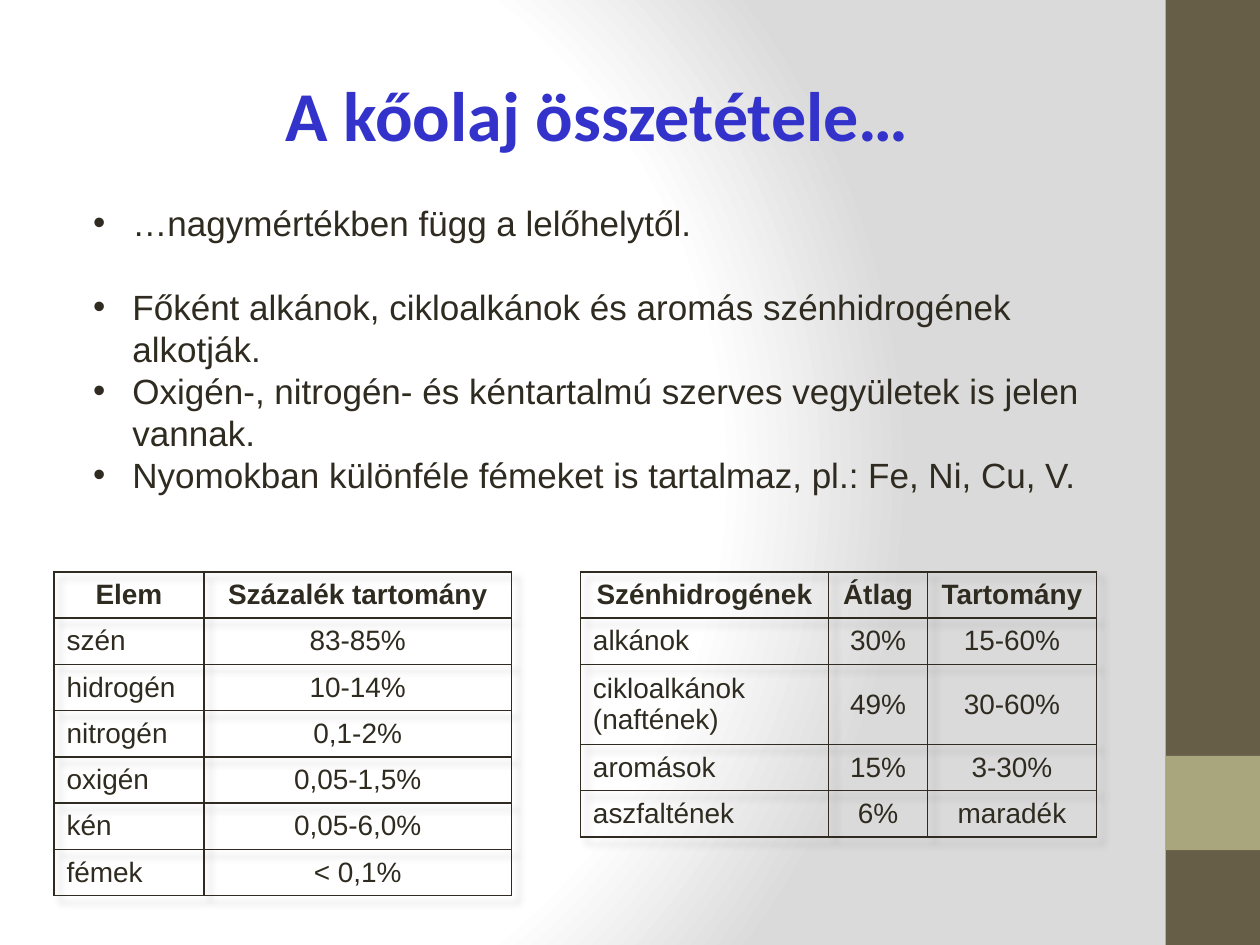
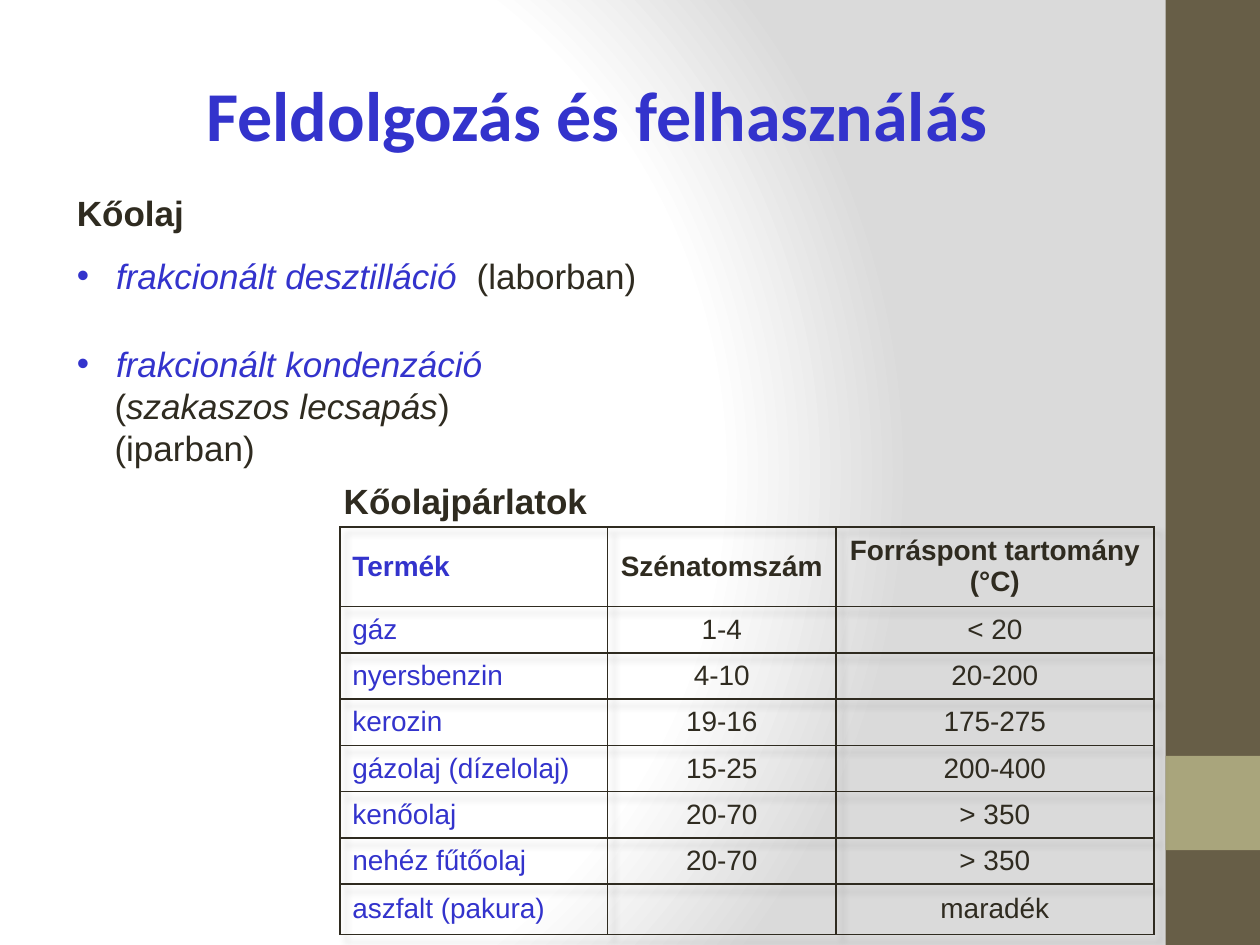
from dataclasses import dataclass

from lxml.etree import SubElement
from pptx import Presentation
from pptx.dml.color import RGBColor
from pptx.enum.shapes import MSO_SHAPE
from pptx.enum.text import MSO_ANCHOR, MSO_AUTO_SIZE, PP_ALIGN
from pptx.oxml import parse_xml
from pptx.oxml.ns import nsdecls, qn
from pptx.util import Cm, Pt

COLORS = {
    "ink": "2F2B20",
    "blue": "3333CC",
    "band": "675E47",
    "accent": "A9A57C",
    "white": "FFFFFF",
    "grey": "DADADA",
}
BODY_FONT, TITLE_FONT = "Arial", "Calibri"
ROW_H, TALL_ROW_H = 0.93, 1.61
INDENT = 0.79


@dataclass
class Run:
    text: str
    color: str = "ink"
    bold: bool = False
    italic: bool = False


@dataclass
class Para:
    runs: list[Run]
    bullet: bool = False
    indent: float = 0
    after: float = 0


@dataclass
class Grid:
    left: float
    top: float
    widths: list[float]
    rows: list[list[str]]
    tall_row: int = -1
    first_color: str = "ink"
    center_head: bool = True


def rgb(name: str) -> RGBColor:
    return RGBColor.from_string(COLORS[name])


# Text
def add_run(p, text: str, *, size=20, font=BODY_FONT, color="ink", bold=False, italic=False):
    r = p.add_run()
    r.text = text
    f = r.font
    f.size, f.name, f.bold, f.italic = Pt(size), font, bold, italic
    f.color.rgb = rgb(color)


def set_bullet(p, indent: float) -> None:
    pPr = p._p.get_or_add_pPr()
    pPr.set("marL", str(Cm(indent)))
    pPr.set("indent", str(-Cm(indent)))
    SubElement(pPr, qn("a:buFont")).set("typeface", BODY_FONT)
    SubElement(pPr, qn("a:buChar")).set("char", "•")


def add_box(s, left: float, top: float, width: float, height: float):
    tf = s.shapes.add_textbox(Cm(left), Cm(top), Cm(width), Cm(height)).text_frame
    tf.word_wrap = True
    tf.auto_size = MSO_AUTO_SIZE.SHAPE_TO_FIT_TEXT
    return tf


def add_paragraphs(s, left: float, top: float, width: float, height: float, paras: list[Para]) -> None:
    tf = add_box(s, left, top, width, height)
    for i, para in enumerate(paras):
        p = tf.paragraphs[0] if i == 0 else tf.add_paragraph()
        p.space_after = Pt(para.after)
        if para.bullet:
            set_bullet(p, INDENT)
        elif para.indent:
            p._p.get_or_add_pPr().set("marL", str(Cm(para.indent)))
        for r in para.runs:
            add_run(p, r.text, color=r.color, bold=r.bold, italic=r.italic)


# Tables
def set_borders(cell) -> None:
    cell.fill.background()
    tcPr = cell._tc.get_or_add_tcPr()
    for i, side in enumerate(("lnL", "lnR", "lnT", "lnB")):
        tcPr.insert(i, parse_xml(
            f'<a:{side} {nsdecls("a")} w="12700"><a:solidFill>'
            f'<a:srgbClr val="{COLORS["ink"]}"/></a:solidFill></a:{side}>'))


def add_grid(s, grid: Grid) -> None:
    heights = [TALL_ROW_H if i == grid.tall_row else ROW_H for i in range(len(grid.rows))]
    table = s.shapes.add_table(
        len(grid.rows), len(grid.widths), Cm(grid.left), Cm(grid.top),
        Cm(sum(grid.widths)), Cm(sum(heights))).table
    table.first_row = table.horz_banding = False
    table._tbl.tblPr.insert(0, parse_xml(
        f'<a:effectLst {nsdecls("a")}><a:outerShdw blurRad="50800" dist="63500" dir="2700000">'
        '<a:srgbClr val="000000"><a:alpha val="20000"/></a:srgbClr></a:outerShdw></a:effectLst>'))
    for col, width in zip(table.columns, grid.widths):
        col.width = Cm(width)
    for i, (row, height) in enumerate(zip(grid.rows, heights)):
        table.rows[i].height = Cm(height)
        for j, text in enumerate(row):
            cell = table.cell(i, j)
            cell.vertical_anchor = MSO_ANCHOR.MIDDLE
            set_borders(cell)
            p = cell.text_frame.paragraphs[0]
            if j > 0 or (i == 0 and grid.center_head):
                p.alignment = PP_ALIGN.CENTER
            if text:
                add_run(p, text, size=16, bold=i == 0,
                        color="ink" if j else grid.first_color)


# Shared background, side band and title
def set_background(master) -> None:
    master.background.fill.solid()
    bgPr = master._element.find(".//" + qn("p:bgPr"))
    stops = "".join(
        f'<a:gs pos="{pos * 1000}"><a:srgbClr val="{COLORS[name]}"/></a:gs>'
        for pos, name in ((0, "white"), (75, "white"), (100, "grey")))
    bgPr.replace(bgPr[0], parse_xml(
        f'<a:gradFill {nsdecls("a")} rotWithShape="1"><a:gsLst>{stops}</a:gsLst>'
        '<a:path path="circle"><a:fillToRect l="20000" t="50000" r="100000" b="50000"/>'
        '</a:path></a:gradFill>'))


def add_band(s, top: float, height: float, color: str) -> None:
    sp = s.shapes.add_shape(MSO_SHAPE.RECTANGLE, Cm(23.5), Cm(top), Cm(1.9), Cm(height))
    sp.shadow.inherit = False
    sp.fill.solid()
    sp.fill.fore_color.rgb = rgb(color)
    sp.line.fill.background()


def new_slide(prs, title: str):
    s = prs.slides.add_slide(prs.slide_layouts[6])
    add_band(s, 0, 19.05, "band")
    add_band(s, 15.24, 1.9, "accent")
    p = add_box(s, 0.7, 1.32, 22.68, 1.96).paragraphs[0]
    p.alignment = PP_ALIGN.CENTER
    add_run(p, title, size=40, font=TITLE_FONT, color="blue", bold=True)
    return s


# Slide contents
ELEMENTS = Grid(1.09, 11.53, [3.02, 6.2], [
    ["Elem", "Százalék tartomány"],
    ["szén", "83-85%"],
    ["hidrogén", "10-14%"],
    ["nitrogén", "0,1-2%"],
    ["oxigén", "0,05-1,5%"],
    ["kén", "0,05-6,0%"],
    ["fémek", "< 0,1%"],
])
HYDROCARBONS = Grid(11.7, 11.53, [5, 2, 3.4], [
    ["Szénhidrogének", "Átlag", "Tartomány"],
    ["alkánok", "30%", "15-60%"],
    ["cikloalkánok (naftének)", "49%", "30-60%"],
    ["aromások", "15%", "3-30%"],
    ["aszfaltének", "6%", "maradék"],
], tall_row=2)
FRACTIONS = Grid(6.85, 10.62, [5.4, 4.6, 6.41], [
    ["Termék", "Szénatomszám", "Forráspont tartomány (°C)"],
    ["gáz", "1-4", "< 20"],
    ["nyersbenzin", "4-10", "20-200"],
    ["kerozin", "19-16", "175-275"],
    ["gázolaj (dízelolaj)", "15-25", "200-400"],
    ["kenőolaj", "20-70", "> 350"],
    ["nehéz fűtőolaj", "20-70", "> 350"],
    ["aszfalt (pakura)", "", "maradék"],
], tall_row=0, first_color="blue", center_head=False)


def composition_slide(prs) -> None:
    s = new_slide(prs, "A kőolaj összetétele…")
    facts = [
        ("…nagymértékben függ a lelőhelytől.", 24),
        ("Főként alkánok, cikloalkánok és aromás szénhidrogének alkotják.", 0),
        ("Oxigén-, nitrogén- és kéntartalmú szerves vegyületek is jelen vannak.", 0),
        ("Nyomokban különféle fémeket is tartalmaz, pl.: Fe, Ni, Cu, V.", 0),
    ]
    add_paragraphs(s, 1.63, 3.94, 20.8, 6.25,
                   [Para([Run(text)], bullet=True, after=after) for text, after in facts])
    add_grid(s, ELEMENTS)
    add_grid(s, HYDROCARBONS)


def processing_slide(prs) -> None:
    s = new_slide(prs, "Feldolgozás és felhasználás")
    add_paragraphs(s, 1.3, 3.73, 13.41, 2.39, [
        Para([Run("Kőolaj", bold=True)], after=12),
        Para([Run("frakcionált desztilláció  ", "blue", italic=True), Run("(laborban)")], bullet=True),
    ])
    add_paragraphs(s, 1.3, 6.78, 13.59, 2.82, [
        Para([Run("frakcionált kondenzáció", "blue", italic=True)], bullet=True),
        Para([Run("("), Run("szakaszos lecsapás", italic=True), Run(")")], indent=0.76),
        Para([Run("(iparban)")], indent=0.76),
    ])
    add_grid(s, FRACTIONS)
    add_paragraphs(s, 6.68, 9.55, 13.59, 1.12, [Para([Run("Kőolajpárlatok", bold=True)])])


def main() -> None:
    prs = Presentation()
    prs.slide_width, prs.slide_height = Cm(25.4), Cm(19.05)
    set_background(prs.slide_master)
    composition_slide(prs)
    processing_slide(prs)
    prs.save("out.pptx")


if __name__ == "__main__":
    main()
